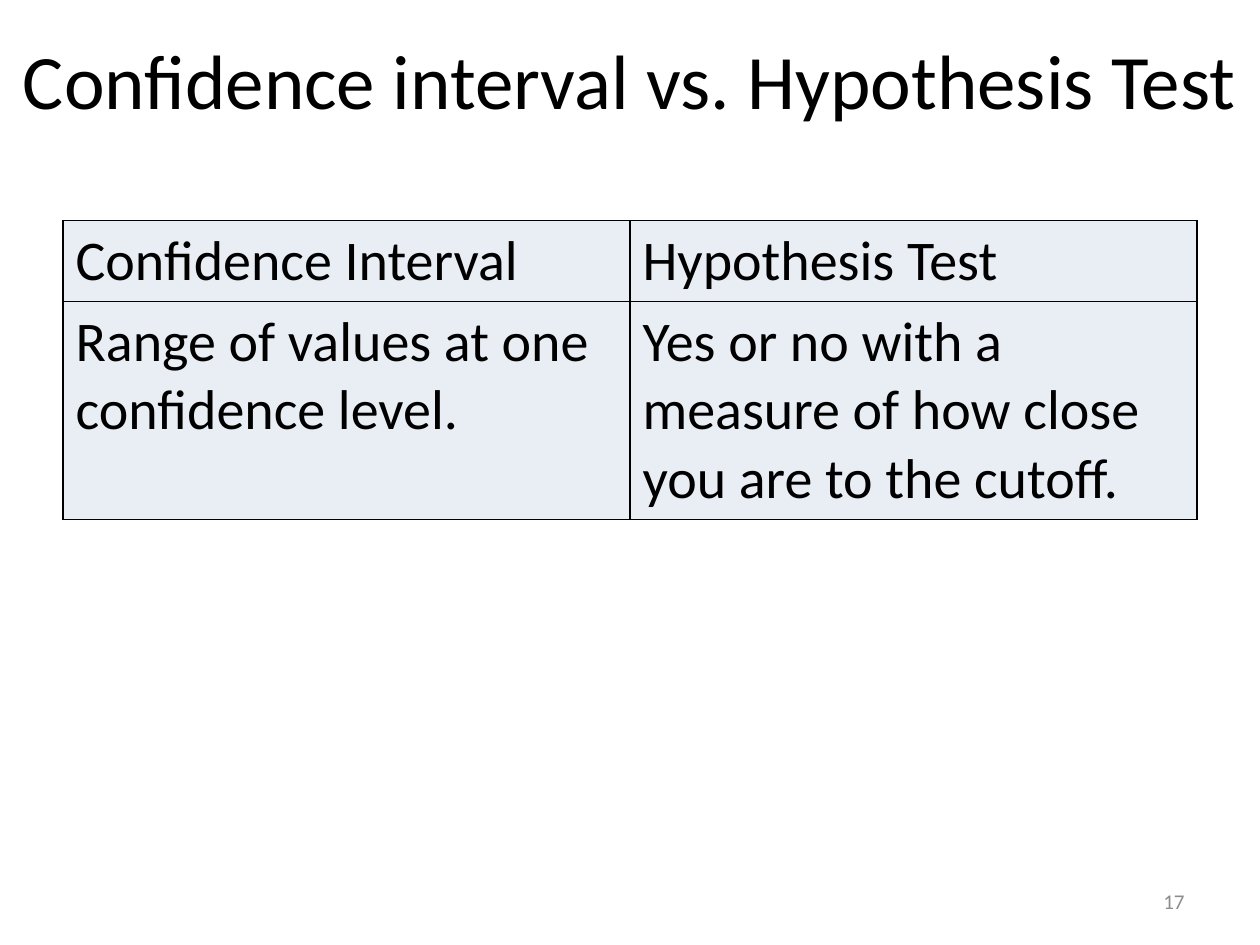
from lxml.etree import SubElement
from pptx import Presentation
from pptx.dml.color import RGBColor
from pptx.enum.text import MSO_ANCHOR, PP_ALIGN
from pptx.oxml.ns import qn
from pptx.util import Inches, Pt


def color(hex_text):
    return RGBColor.from_string(hex_text)


def write(frame, text, size=32, fill="000000", font="Calibri",
          align=PP_ALIGN.LEFT, anchor=MSO_ANCHOR.TOP):
    frame.word_wrap = True
    para = frame.paragraphs[0]
    para.alignment = align
    span = para.add_run()
    span.text = text
    span.font.name = font
    span.font.size = Pt(size)
    span.font.color.rgb = color(fill)
    frame.vertical_anchor = anchor


class SlideBuilder:
    cell_fill = "E9EDF4"
    border_color = "000000"
    border_width = Pt(1)
    muted = "8C8C8C"

    def __init__(self, page):
        self.page = page

    def title(self, text, left, top, width, height):
        box = self.page.shapes.title
        box.left, box.top = Inches(left), Inches(top)
        box.width, box.height = Inches(width), Inches(height)
        write(box.text_frame, text, size=44, align=PP_ALIGN.CENTER,
              anchor=MSO_ANCHOR.MIDDLE)

    def table(self, rows, left, top, width, row_heights):
        table = self.page.shapes.add_table(
            len(rows), len(rows[0]), Inches(left), Inches(top),
            Inches(width), Inches(sum(row_heights))).table
        for row, height in zip(table.rows, row_heights):
            row.height = Inches(height)
        for row_index, texts in enumerate(rows):
            for column_index, text in enumerate(texts):
                cell = table.cell(row_index, column_index)
                write(cell.text_frame, text)
                self.borders(cell)
                cell.fill.solid()
                cell.fill.fore_color.rgb = color(self.cell_fill)

    def borders(self, cell):
        properties = cell._tc.get_or_add_tcPr()
        for side in ("a:lnL", "a:lnR", "a:lnT", "a:lnB"):
            line = SubElement(properties, qn(side), w=str(self.border_width))
            solid = SubElement(line, qn("a:solidFill"))
            SubElement(solid, qn("a:srgbClr"), val=self.border_color)

    def page_number(self, text, left, top, width, height):
        box = self.page.shapes.add_textbox(
            Inches(left), Inches(top), Inches(width), Inches(height))
        write(box.text_frame, text, size=12, fill=self.muted,
              align=PP_ALIGN.RIGHT, anchor=MSO_ANCHOR.MIDDLE)


def main():
    deck = Presentation()
    deck.slide_width, deck.slide_height = Inches(10), Inches(7.5)
    builder = SlideBuilder(deck.slides.add_slide(deck.slide_layouts[5]))

    # Heading
    builder.title("Confidence interval vs. Hypothesis Test", 0, 0, 10, 1.25)

    # Comparison table
    builder.table([
        ["Confidence Interval", "Hypothesis Test"],
        ["Range of values at one confidence level.",
         "Yes or no with a measure of how close you are to the cutoff."],
    ], 0.5, 1.75, 9, row_heights=[0.64, 1.69])

    # Page number
    builder.page_number("17", 7.17, 6.95, 2.33, 0.4)

    deck.save("out.pptx")


if __name__ == "__main__":
    main()
